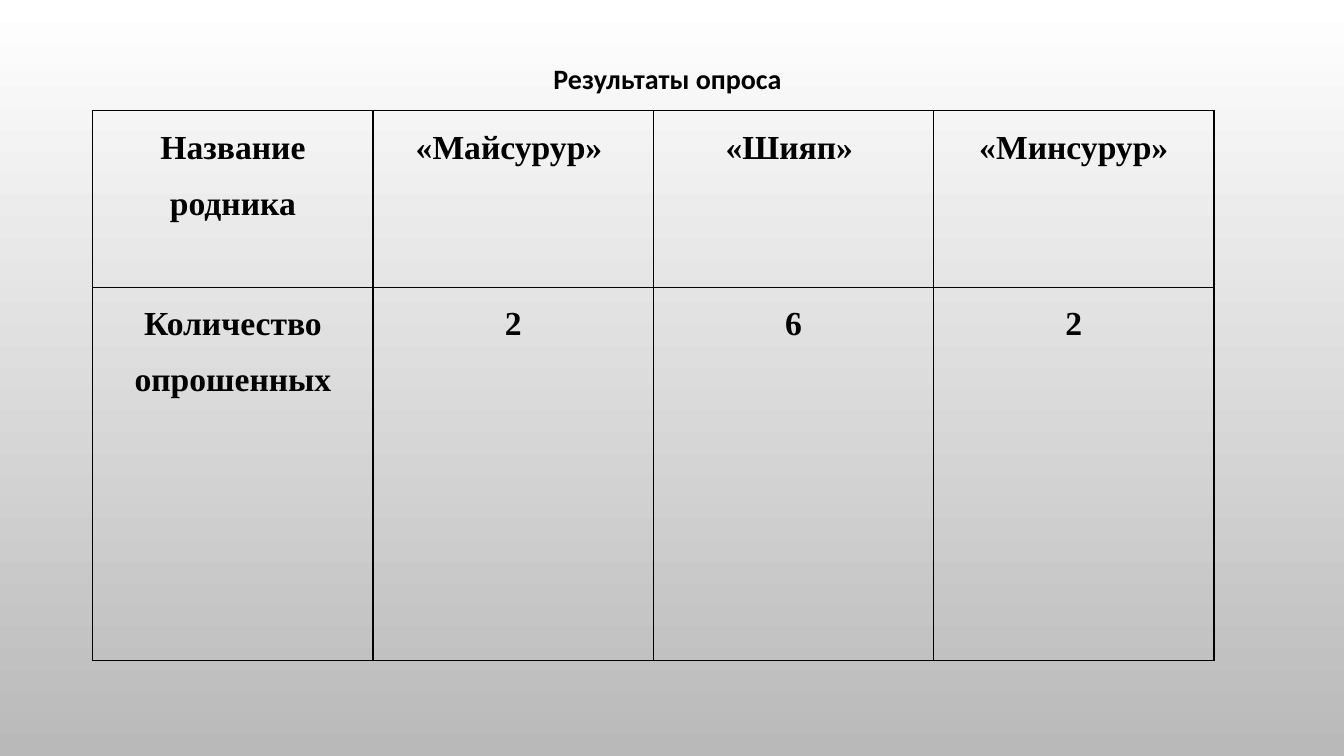
import pptx
import pptx.dml.color
import pptx.enum.text
import pptx.oxml
import pptx.oxml.ns
import pptx.util
from pptx.util import Inches

BLACK = pptx.dml.color.RGBColor(0x00, 0x00, 0x00)
WHITE = pptx.dml.color.RGBColor(0xFF, 0xFF, 0xFF)
GREY = pptx.dml.color.RGBColor(0xB9, 0xB9, 0xB9)

SURVEY = [
    ["Название родника", "«Майсурур» ", "«Шияп» ", "«Минсурур»"],
    ["Количество опрошенных", "2", "6", "2"],
]
ROW_HEIGHTS = [1.75, 3.7]
COLUMN_WIDTH = 2.78


def set_background(s):
    """Fill the slide with a gradient running from white down to grey."""
    fill = s.background.fill
    fill.gradient()
    fill.gradient_angle = 270
    for stop, color in zip(fill.gradient_stops, (WHITE, GREY)):
        stop.color.rgb = color


def add_run(p, text, font, size):
    """Add a bold black run to a centred paragraph."""
    p.alignment = pptx.enum.text.PP_ALIGN.CENTER
    r = p.add_run()
    r.text = text
    r.font.name = font
    r.font.size = pptx.util.Pt(size)
    r.font.bold = True
    r.font.color.rgb = BLACK


def set_title(s, text):
    """Place the title and indent its first line."""
    sp = s.shapes.title
    sp.left, sp.top = Inches(4.84), Inches(0.56)
    sp.width, sp.height = Inches(3.07), Inches(0.44)
    tf = sp.text_frame
    tf.word_wrap = True
    tf.auto_size = pptx.enum.text.MSO_AUTO_SIZE.SHAPE_TO_FIT_TEXT
    tf.vertical_anchor = pptx.enum.text.MSO_ANCHOR.MIDDLE
    p = tf.paragraphs[0]
    add_run(p, text, "Calibri", 20)
    pPr = p._p.get_or_add_pPr()
    pPr.set("marL", "0")
    pPr.set("indent", str(Inches(0.49)))


def set_borders(cell):
    """Draw a thin black line on each side of a cell."""
    tcPr = cell._tc.get_or_add_tcPr()
    for i, side in enumerate(("lnL", "lnR", "lnT", "lnB")):
        ln = pptx.oxml.parse_xml(
            f'<a:{side} {pptx.oxml.ns.nsdecls("a")} w="{pptx.util.Pt(1)}">'
            f'<a:solidFill><a:srgbClr val="{BLACK}"/></a:solidFill></a:{side}>'
        )
        tcPr.insert(i, ln)


def fill_cell(cell, text):
    """Format a table cell and write its text."""
    cell.fill.background()
    cell.margin_left = cell.margin_right = Inches(0.07)
    cell.margin_top = cell.margin_bottom = 0
    set_borders(cell)
    p = cell.text_frame.paragraphs[0]
    p.line_spacing = 1.5
    add_run(p, text, "Times New Roman", 24)


def add_survey_table(s):
    """Add the table of springs and respondents."""
    columns = len(SURVEY[0])
    table = s.shapes.add_table(
        len(SURVEY), columns, Inches(0.92), Inches(1.1),
        Inches(COLUMN_WIDTH * columns), Inches(sum(ROW_HEIGHTS)),
    ).table
    table.first_row = table.horz_banding = False
    for column in table.columns:
        column.width = Inches(COLUMN_WIDTH)
    for row, height, texts in zip(table.rows, ROW_HEIGHTS, SURVEY):
        row.height = Inches(height)
        for cell, text in zip(row.cells, texts):
            fill_cell(cell, text)


def main():
    """Build the survey results slide."""
    prs = pptx.Presentation()
    prs.slide_width, prs.slide_height = Inches(13.33), Inches(7.5)
    s = prs.slides.add_slide(prs.slide_layouts[5])
    set_background(s)
    add_survey_table(s)
    set_title(s, "Результаты опроса")
    prs.save("out.pptx")


if __name__ == "__main__":
    main()
